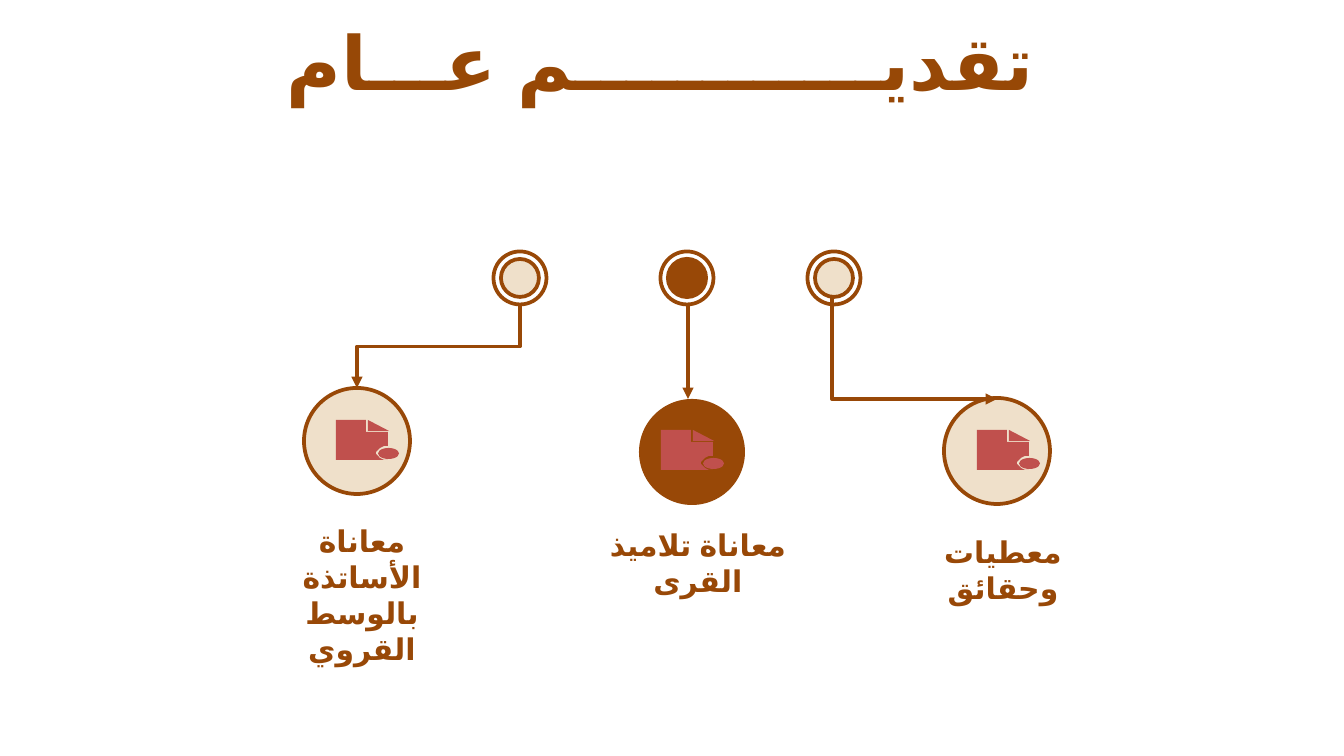
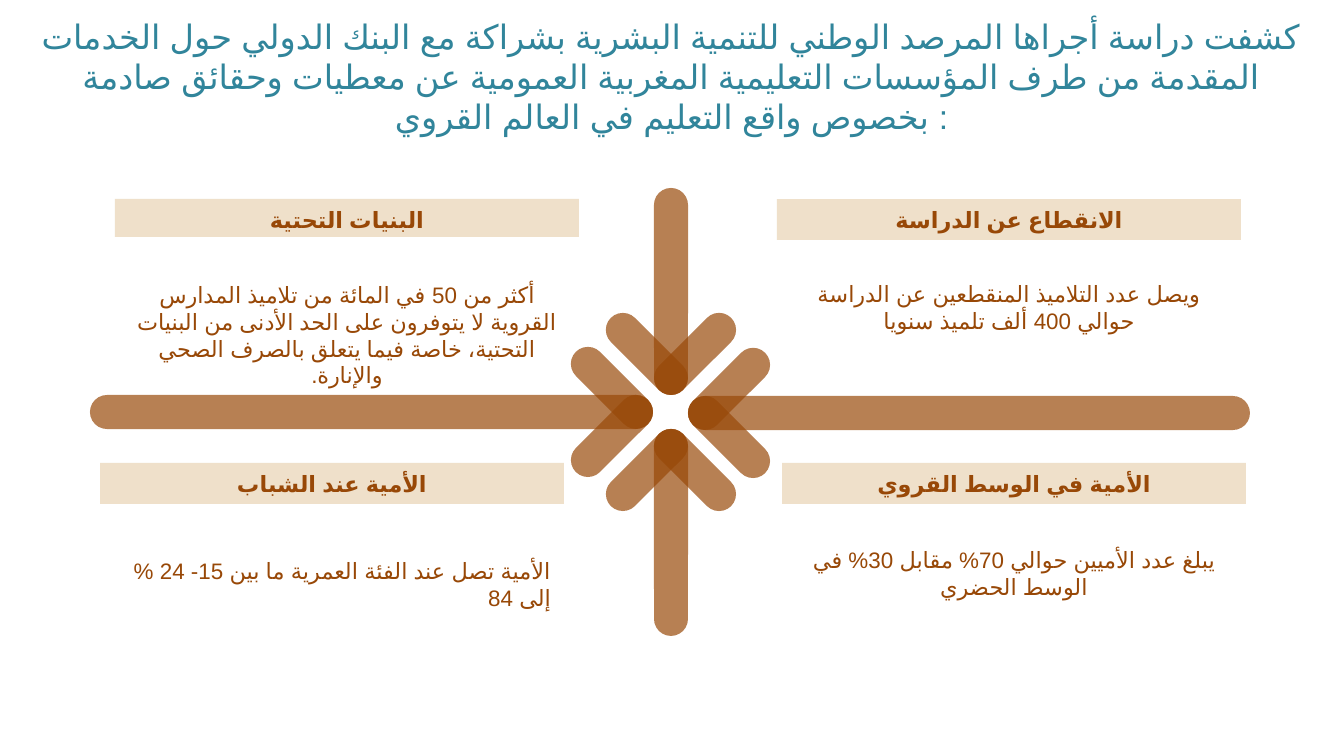
"""Build two slides on schooling in rural areas."""
import copy
import math

import lxml.etree
import pptx
import pptx.dml.color
import pptx.enum.lang
import pptx.enum.shapes
import pptx.enum.text
import pptx.oxml.ns
import pptx.util

SCALE = 914400 / 134.4
FONT = "Arial"
BROWN = pptx.dml.color.RGBColor(0x98, 0x48, 0x07)
TITLE_BROWN = pptx.dml.color.RGBColor(0x97, 0x48, 0x06)
SAND = pptx.dml.color.RGBColor(0xEF, 0xE0, 0xCA)
RED = pptx.dml.color.RGBColor(0xC0, 0x50, 0x4D)
TEAL = pptx.dml.color.RGBColor(0x31, 0x85, 0x9B)
ALIGN = pptx.enum.text.PP_ALIGN
ANCHOR = pptx.enum.text.MSO_ANCHOR
SHAPE = pptx.enum.shapes.MSO_SHAPE
CONNECTOR = pptx.enum.shapes.MSO_CONNECTOR
ARABIC = pptx.enum.lang.MSO_LANGUAGE_ID.ARABIC_MOROCCO
PILL_WIDTH = 34
HEAD_LENGTH = 102


def px(length):
    """Turn pixels into EMU."""
    return pptx.util.Emu(round(length * SCALE))


def add_child(parent, tag, **attributes):
    """Append a drawing element to an XML parent."""
    return lxml.etree.SubElement(parent, pptx.oxml.ns.qn(tag), attributes)


def write(shape, text, size=12, color=BROWN, bold=False, align=ALIGN.CENTER,
          anchor=ANCHOR.TOP, rtl=False, pad=7):
    """Put one formatted paragraph, with its line breaks, into a shape."""
    frame = shape.text_frame
    frame.word_wrap = True
    frame.auto_size = pptx.enum.text.MSO_AUTO_SIZE.NONE
    frame.vertical_anchor = anchor
    frame.margin_left = frame.margin_right = px(13)
    frame.margin_top = frame.margin_bottom = px(pad)
    para = frame.paragraphs[0]
    para.alignment = align
    if rtl:
        para._p.get_or_add_pPr().set("rtl", "1")
    for number, line in enumerate(text.split("\n")):
        if number:
            para.add_line_break()
        span = para.add_run()
        span.text = line
        span.font.size = pptx.util.Pt(size)
        span.font.bold = bold
        span.font.color.rgb = color
        span.font.name = FONT
        span.font.language_id = ARABIC
        add_child(span._r.get_or_add_rPr(), "a:cs", typeface=FONT)
    for line_break in para._p.findall(pptx.oxml.ns.qn("a:br")):
        line_break.insert(0, copy.deepcopy(span._r.get_or_add_rPr()))


def paint(shape, fill=None, line=None):
    """Set the fill and outline of a shape and drop its shadow."""
    shape.shadow.inherit = False
    if fill is None:
        shape.fill.background()
    else:
        shape.fill.solid()
        shape.fill.fore_color.rgb = fill
    if line is None:
        shape.line.fill.background()
    else:
        shape.line.color.rgb = line
        shape.line.width = pptx.util.Pt(2)


def add_preset(shapes, kind, left, top, width, height, fill=None, line=None):
    """Add a painted preset shape."""
    shape = shapes.add_shape(kind, px(left), px(top), px(width), px(height))
    paint(shape, fill, line)
    return shape


def add_disc(shapes, x, y, size, fill=None, line=None):
    """Add a circle around a centre."""
    return add_preset(shapes, SHAPE.OVAL, x - size / 2, y - size / 2, size, size, fill, line)


def add_text(shapes, left, top, width, height, text, **style):
    """Add a wrapped text box."""
    box = shapes.add_textbox(px(left), px(top), px(width), px(height))
    write(box, text, **style)


def add_page(deck, text, left, top, width, height, **style):
    """Add a title-only page and place its title."""
    page = deck.slides.add_slide(deck.slide_layouts[5])
    title = page.shapes.title
    title.left, title.top, title.width, title.height = map(px, (left, top, width, height))
    write(title, text, anchor=ANCHOR.MIDDLE, pad=13, **style)
    return page


def add_link(shapes, kind, begin, end, quarter_turn=False, bend=None):
    """Add an arrow that may leave downwards or bend at a given share."""
    if quarter_turn:
        middle_x, middle_y = (begin[0] + end[0]) / 2, (begin[1] + end[1]) / 2
        begin, end = [(middle_x + y - middle_y, middle_y - x + middle_x)
                      for x, y in (begin, end)]
    link = shapes.add_connector(kind, *map(px, (*begin, *end)))
    link.line.color.rgb = BROWN
    link.line.width = pptx.util.Pt(2)
    properties = link.element.spPr
    if quarter_turn:
        properties.find(pptx.oxml.ns.qn("a:xfrm")).set("rot", "5400000")
    if bend is not None:
        guides = properties.find(".//" + pptx.oxml.ns.qn("a:avLst"))
        add_child(guides, "a:gd", name="adj1", fmla=f"val {bend}")
    add_child(properties.find(pptx.oxml.ns.qn("a:ln")), "a:tailEnd", type="triangle")
    add_child(properties, "a:effectLst")


def add_target(page, x, y, core_size, fill, line):
    """Add a ring with a filled core."""
    group = page.shapes.add_group_shape().shapes
    add_disc(group, x, y, core_size, fill, line)
    add_disc(group, x, y, 53, line=BROWN)


def add_document_icon(page, left, top):
    """Add a sheet with a folded corner and an oval badge."""
    group = page.shapes.add_group_shape().shapes
    notch = [(52 - 12 * math.sin(math.radians(angle)), 33 - 7 * math.cos(math.radians(angle)))
             for angle in range(0, 181, 20)]
    sheet = [(30, 0), (30, 12), (52, 12), *notch, (52, 40), (0, 40)]
    fold = [(53, 11), (32, 11)]
    builder = group.build_freeform(left, top, SCALE)
    builder.add_line_segments([(left + x, top + y) for x, y in sheet])
    builder.move_to(left + 32, top)
    builder.add_line_segments([(left + x, top + y) for x, y in fold])
    paint(builder.convert_to_shape(), RED)
    add_preset(group, SHAPE.OVAL, left + 42, top + 28, 21, 11, RED)


def add_pill_arrow(page, tip_x, tip_y, angle, length):
    """Add a shaft and two head strokes leaving a tip at an angle."""
    group = page.shapes.add_group_shape().shapes
    for turn, size in ((0, length), (45, HEAD_LENGTH), (-45, HEAD_LENGTH)):
        direction = math.radians(angle + turn)
        reach = (size - PILL_WIDTH) / 2
        x = tip_x + reach * math.cos(direction)
        y = tip_y + reach * math.sin(direction)
        pill = add_preset(group, SHAPE.ROUNDED_RECTANGLE, x - size / 2,
                          y - PILL_WIDTH / 2, size, PILL_WIDTH, BROWN)
        pill.adjustments[0] = 0.5
        pill.rotation = (angle + turn) % 180
        color = pill.element.spPr.find(".//" + pptx.oxml.ns.qn("a:srgbClr"))
        add_child(color, "a:alpha", val="69000")


def add_finding(page, left, bar_top, bar_height, text_top, text_height, heading, text, **style):
    """Add a heading bar with its finding below."""
    group = page.shapes.add_group_shape().shapes
    add_text(group, left, text_top, 464, text_height, text, **style)
    bar = add_preset(group, SHAPE.RECTANGLE, left, bar_top, 464, bar_height, SAND)
    write(bar, heading, bold=True)


def build_overview(deck):
    """Build the page with the three themes."""
    page = add_page(deck, "تقديــــــــــــم عـــام", -11, 19, 1344, 83,
                    size=40, color=TITLE_BROWN, bold=True)
    shapes = page.shapes
    themes = [
        (520, 38, SAND, BROWN, 357, 441, 251, 516, "معاناة\nالأساتذة\nبالوسط\nالقروي"),
        (687, 42, BROWN, None, 692, 452, 587, 520, "معاناة تلاميذ\nالقرى"),
        (834, 38, SAND, BROWN, 997, 451, 892, 527, "معطيات\nوحقائق"),
    ]
    for ring_x, core, fill, line, x, y, text_left, text_top, text in themes:
        add_target(page, ring_x, 278, core, fill, line)
        add_disc(shapes, x, y, 106, fill, line)
        add_text(shapes, text_left, text_top, 222, 58, text, size=16, bold=True)
    add_link(shapes, CONNECTOR.ELBOW, (520, 305), (357, 388), quarter_turn=True)
    add_link(shapes, CONNECTOR.ELBOW, (832, 298), (997, 399), bend=0)
    add_link(shapes, CONNECTOR.STRAIGHT, (688, 305), (688, 399))
    for left, top in ((977, 430), (336, 420), (661, 430)):
        add_document_icon(page, left, top)


def build_findings(deck):
    """Build the page with the four findings."""
    page = add_page(
        deck,
        "كشفت دراسة أجراها المرصد الوطني للتنمية البشرية بشراكة مع البنك الدولي حول الخدمات\n"
        "المقدمة من طرف المؤسسات التعليمية المغربية العمومية عن معطيات وحقائق صادمة\n"
        "بخصوص واقع التعليم في العالم القروي :",
        4, 1, 1335, 150, size=18, color=TEAL)
    for tip_x, tip_y, angle, length in ((636, 412, 180, 563), (705, 413, 0, 562),
                                        (671, 446, 90, 207), (671, 378, 270, 207)):
        add_pill_arrow(page, tip_x, tip_y, angle, length)
    add_finding(page, 115, 199, 38, 274, 114, "البنيات التحتية",
                "أكثر من 50 في المائة من تلاميذ المدارس\n"
                "القروية لا يتوفرون على الحد الأدنى من البنيات\n"
                "التحتية، خاصة فيما يتعلق بالصرف الصحي\nوالإنارة.", rtl=True)
    add_finding(page, 777, 199, 41, 273, 93, "الانقطاع عن الدراسة",
                "ويصل عدد التلاميذ المنقطعين عن الدراسة\nحوالي 400 ألف تلميذ سنويا", rtl=True)
    add_finding(page, 100, 463, 41, 550, 122, "الأمية عند الشباب",
                "% الأمية تصل عند الفئة العمرية ما بين 15- 24\nإلى 84", align=ALIGN.RIGHT)
    add_finding(page, 782, 463, 41, 539, 122, "الأمية في الوسط القروي",
                "يبلغ عدد الأميين حوالي 70% مقابل 30% في\nالوسط الحضري")


def main():
    """Build and save the deck."""
    deck = pptx.Presentation()
    deck.slide_width, deck.slide_height = px(1344), px(756)
    build_overview(deck)
    build_findings(deck)
    deck.save("out.pptx")


if __name__ == "__main__":
    main()
